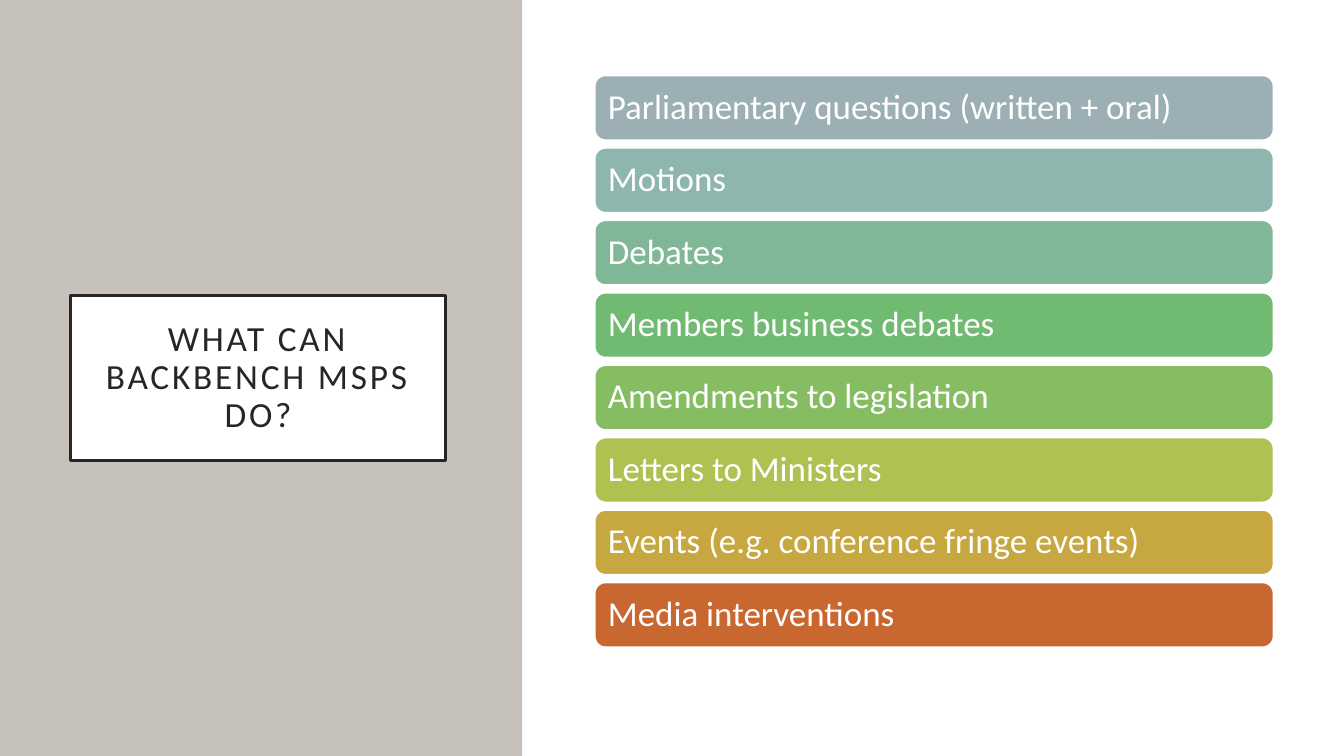
import pptx
import pptx.util
import pptx.dml.color
import pptx.enum.shapes
import pptx.enum.text

Inches = pptx.util.Inches
Pt = pptx.util.Pt
RGBColor = pptx.dml.color.RGBColor
MSO_SHAPE = pptx.enum.shapes.MSO_SHAPE
PP_ALIGN = pptx.enum.text.PP_ALIGN

WHITE = RGBColor(0xFF, 0xFF, 0xFF)
INK = RGBColor(0x26, 0x26, 0x26)
STONE = RGBColor(0xC6, 0xC1, 0xBA)

ACTIVITIES = [
    ("Parliamentary questions (written + oral)", RGBColor(0x9B, 0xAF, 0xB5)),
    ("Motions", RGBColor(0x8E, 0xB6, 0xAF)),
    ("Debates", RGBColor(0x80, 0xB8, 0x97)),
    ("Members business debates", RGBColor(0x71, 0xBA, 0x71)),
    ("Amendments to legislation", RGBColor(0x87, 0xBD, 0x62)),
    ("Letters to Ministers", RGBColor(0xAE, 0xC1, 0x51)),
    ("Events (e.g. conference fringe events)", RGBColor(0xC6, 0xA7, 0x40)),
    ("Media interventions", RGBColor(0xC9, 0x67, 0x31)),
]
FIRST_TOP, LAST_TOP = 0.75, 5.78
PITCH = (LAST_TOP - FIRST_TOP) / (len(ACTIVITIES) - 1)

presentation = pptx.Presentation()
presentation.slide_width = Inches(13.33)
presentation.slide_height = Inches(7.5)
slide = presentation.slides.add_slide(presentation.slide_layouts[6])


def add_box(preset, left, top, width, height, fill, line=None, line_width=0):
    box = slide.shapes.add_shape(
        preset, Inches(left), Inches(top), Inches(width), Inches(height))
    box.shadow.inherit = False
    box.fill.solid()
    box.fill.fore_color.rgb = fill
    if line is None:
        box.line.fill.background()
    else:
        box.line.color.rgb = line
        box.line.width = Pt(line_width)
    return box


def write_text(box, text, size, color, align, inset):
    frame = box.text_frame
    frame.word_wrap = True
    frame.vertical_anchor = pptx.enum.text.MSO_ANCHOR.MIDDLE
    frame.margin_left = frame.margin_right = Inches(inset)
    frame.margin_top = frame.margin_bottom = Inches(0.1)
    paragraph = frame.paragraphs[0]
    paragraph.text = text
    paragraph.alignment = align
    paragraph.line_spacing = 0.9
    paragraph.font.name = "Calibri"
    paragraph.font.size = Pt(size)
    paragraph.font.color.rgb = color
    return paragraph


# Background panels
add_box(MSO_SHAPE.RECTANGLE, 0, 0, 5.18, 7.5, STONE)
add_box(MSO_SHAPE.RECTANGLE, 5.2, 0, 8.13, 7.5, WHITE)

# Framed title with letters spaced by 2 pt
title = add_box(MSO_SHAPE.RECTANGLE, 0.7, 2.93, 3.72, 1.64, WHITE, INK, 2.5)
heading = write_text(title, "WHAT CAN BACKBENCH MSPS DO?", 25.2, INK,
                     PP_ALIGN.CENTER, 0.2)
heading.runs[0].font._element.set("spc", "200")

# Activity bars
for row, (activity, color) in enumerate(ACTIVITIES):
    bar = add_box(MSO_SHAPE.ROUNDED_RECTANGLE, 5.9, FIRST_TOP + row * PITCH,
                  6.73, 0.64, color, WHITE, 1)
    # The rounded corners add about 0.03 inch to the inset
    write_text(bar, activity, 25, WHITE, PP_ALIGN.LEFT, 0.1)

presentation.save("out.pptx")
